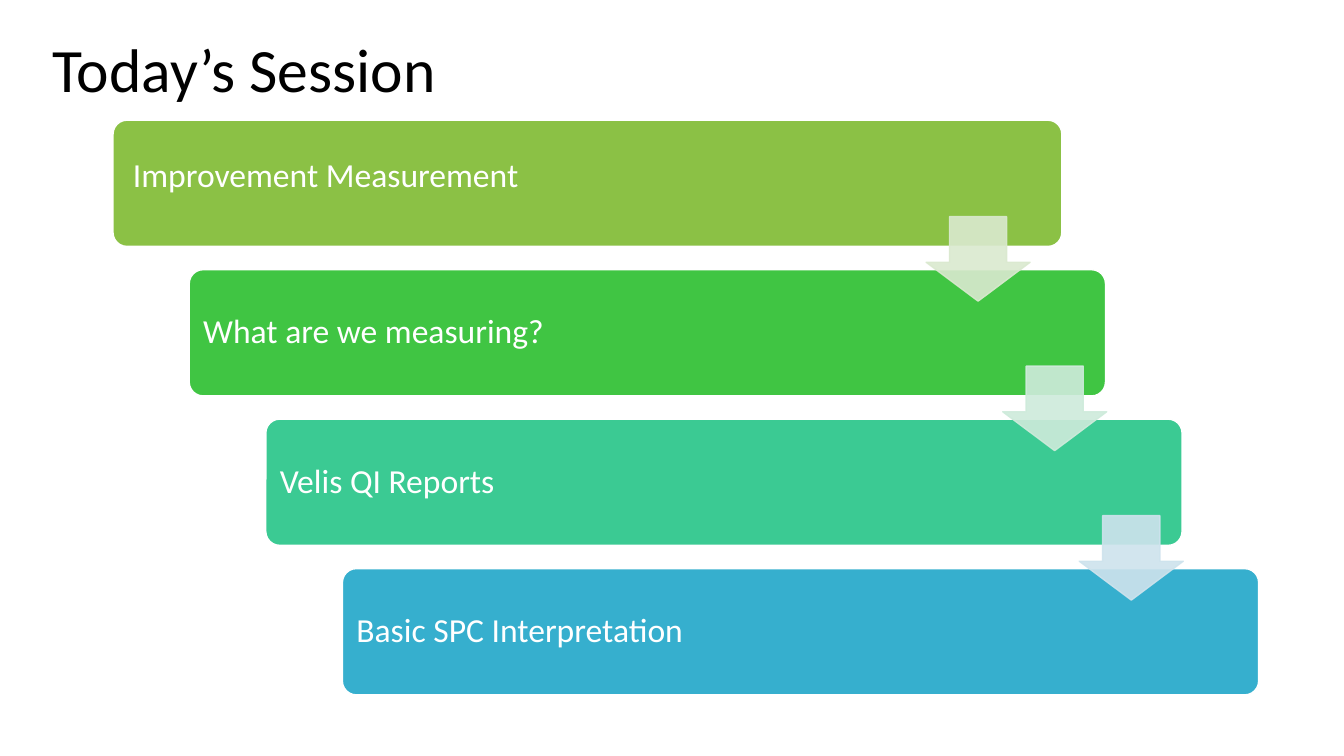
from lxml.etree import SubElement
from pptx import Presentation
from pptx.dml.color import RGBColor
from pptx.enum.shapes import MSO_SHAPE as Shape
from pptx.enum.text import MSO_ANCHOR as Anchor, PP_ALIGN as Align
from pptx.oxml.ns import qn
from pptx.util import Cm, Pt

COLOURS = {
    "text": "000000",
    "white": "FFFFFF",
    "bars": ["8BC145", "40C543", "3BCA93", "36AFCE"],
    "arrows": ["DAE9CF", "CEEBDB", "CEE3ED"],
}
TOPICS = [
    "Improvement Measurement",
    "What are we measuring?",
    "Velis QI Reports",
    "Basic SPC Interpretation",
]


def write_text(shape, text, size, colour, anchor):
    """Put one left-aligned line of text into a shape."""
    frame = shape.text_frame
    frame.word_wrap = True
    frame.vertical_anchor = anchor
    para = frame.paragraphs[0]
    para.text = text
    para.alignment = Align.LEFT
    para.line_spacing = 0.9
    para.font.name = "Calibri"
    para.font.size = Pt(size)
    para.font.color.rgb = RGBColor.from_string(colour)
    return frame


def add_block(page, kind, box, fill, line, adjustments):
    """Draw a filled preset shape in the given box, in centimetres."""
    shape = page.shapes.add_shape(kind, *map(Cm, box))
    shape.shadow.inherit = False
    shape.fill.solid()
    shape.fill.fore_color.rgb = RGBColor.from_string(fill)
    shape.line.color.rgb = RGBColor.from_string(line)
    shape.line.width = Pt(1)
    for index, value in enumerate(adjustments):
        shape.adjustments[index] = value
    return shape


def add_title(page, box, text):
    """Place the slide title at the bottom of its box."""
    title = page.shapes.add_textbox(*map(Cm, box))
    frame = write_text(title, text, 44, COLOURS["text"], Anchor.BOTTOM)
    frame.paragraphs[0].space_after = Pt(6)


def add_cascade(page, box, topics):
    """Step the topic bars down through the box and link them with arrows."""
    left, top, width, height = box
    bar_width, bar_height, step_x = 23.09, 3.18, 1.93
    step_y = (height - bar_height) / (len(topics) - 1)
    first_left = left + width - bar_width - step_x * (len(topics) - 1)

    for index, (topic, colour) in enumerate(zip(topics, COLOURS["bars"])):
        bar_left = first_left + index * step_x
        bar_right = bar_left + bar_width
        if index == 0:
            bar_left, bar_right = left, left + 23.91
        bar_box = (bar_left, top + index * step_y, bar_right - bar_left, bar_height)
        bar = add_block(page, Shape.ROUNDED_RECTANGLE, bar_box, colour,
                        COLOURS["white"], [0.11])
        frame = write_text(bar, topic, 24, COLOURS["white"], Anchor.MIDDLE)
        frame.margin_left = Cm(0.4 if index == 0 else 0.25)
        frame.margin_top = Cm(0 if index == 0 else 0.25)
        frame.margin_bottom = Cm(0.36 if index == 0 else 0.25)

    for index, colour in enumerate(COLOURS["arrows"]):
        arrow_box = (left + 20.49 + index * step_x, top + 2.43 + index * step_y,
                     2.62, 2.13)
        arrow = add_block(page, Shape.DOWN_ARROW, arrow_box, colour, colour,
                          [0.55, 0.46])
        for tone in arrow._element.spPr.iter(qn("a:srgbClr")):
            SubElement(tone, qn("a:alpha"), val="90000")


def main():
    """Build the session slide and save it."""
    deck = Presentation()
    deck.slide_width, deck.slide_height = Cm(33.87), Cm(19.05)
    page = deck.slides.add_slide(deck.slide_layouts[6])
    add_title(page, (1.07, -0.03, 21.89, 2.82), "Today’s Session")
    add_cascade(page, (2.85, 3.03, 28.87, 14.48), TOPICS)
    deck.save("out.pptx")


if __name__ == "__main__":
    main()
